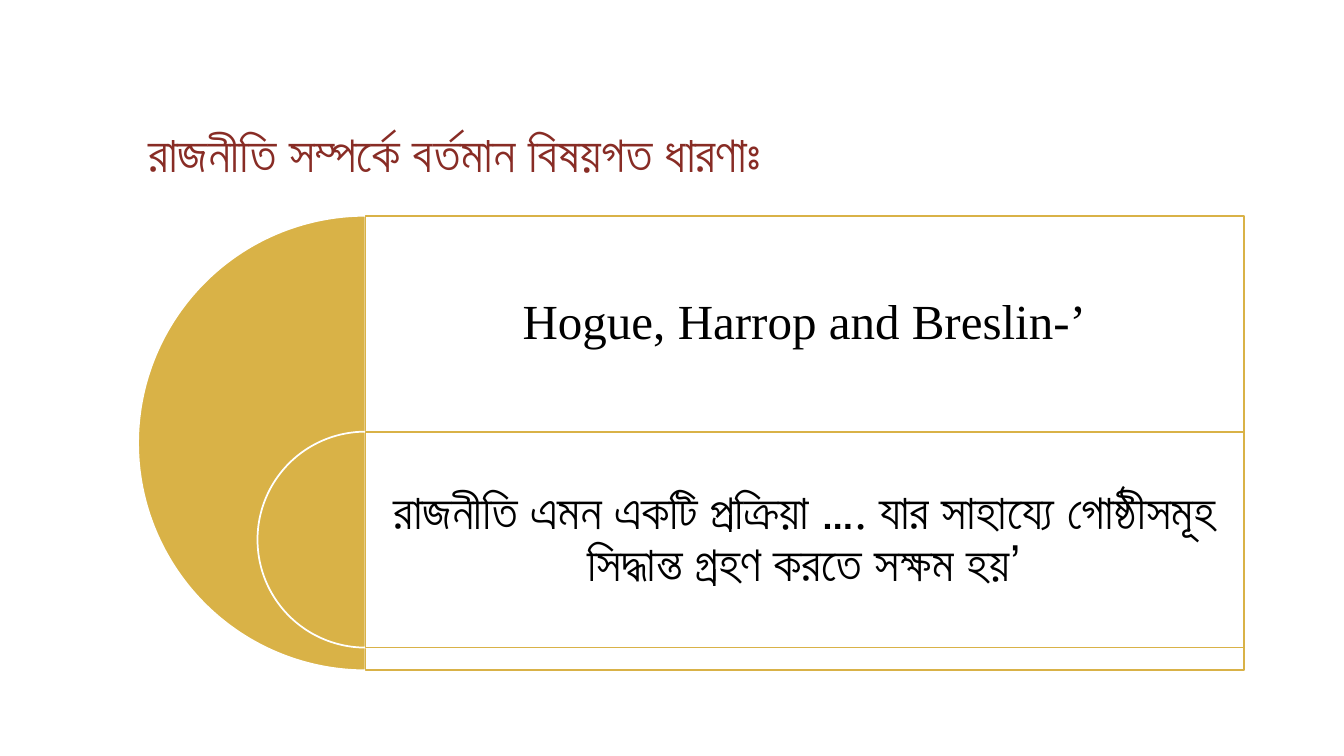
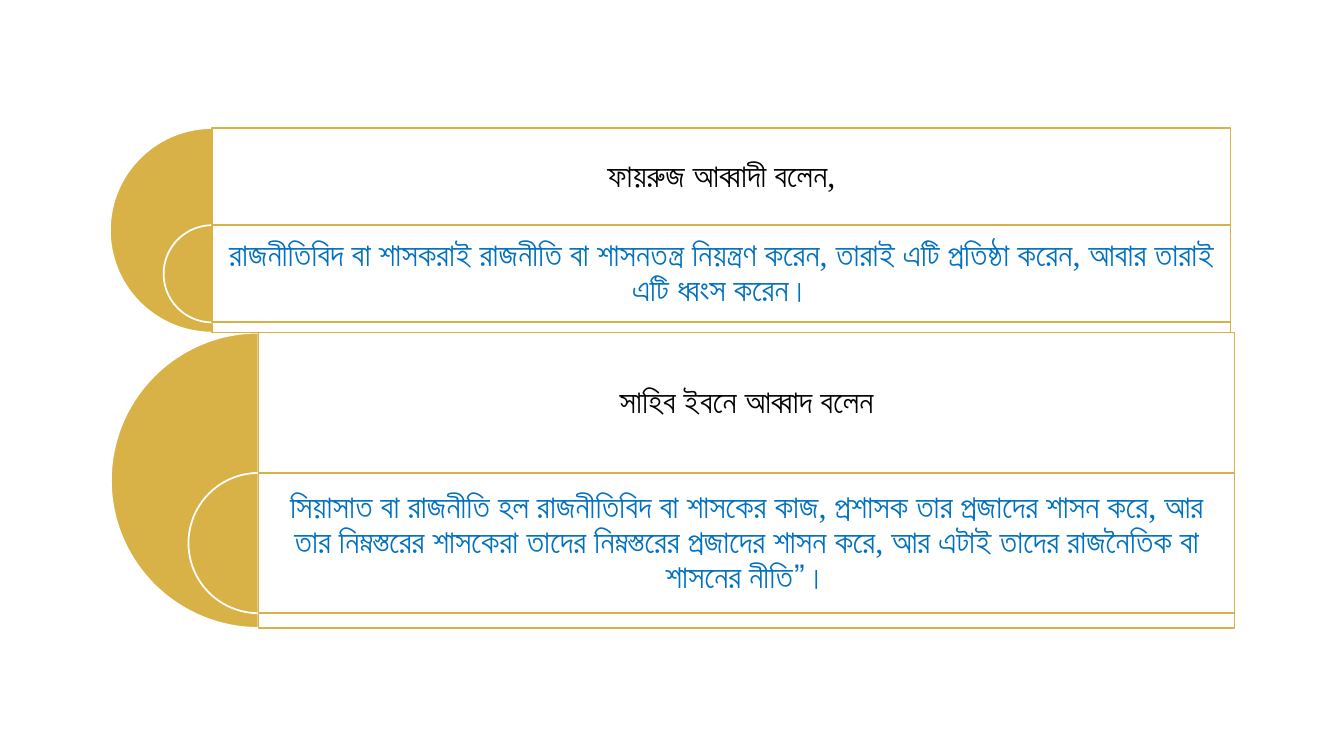
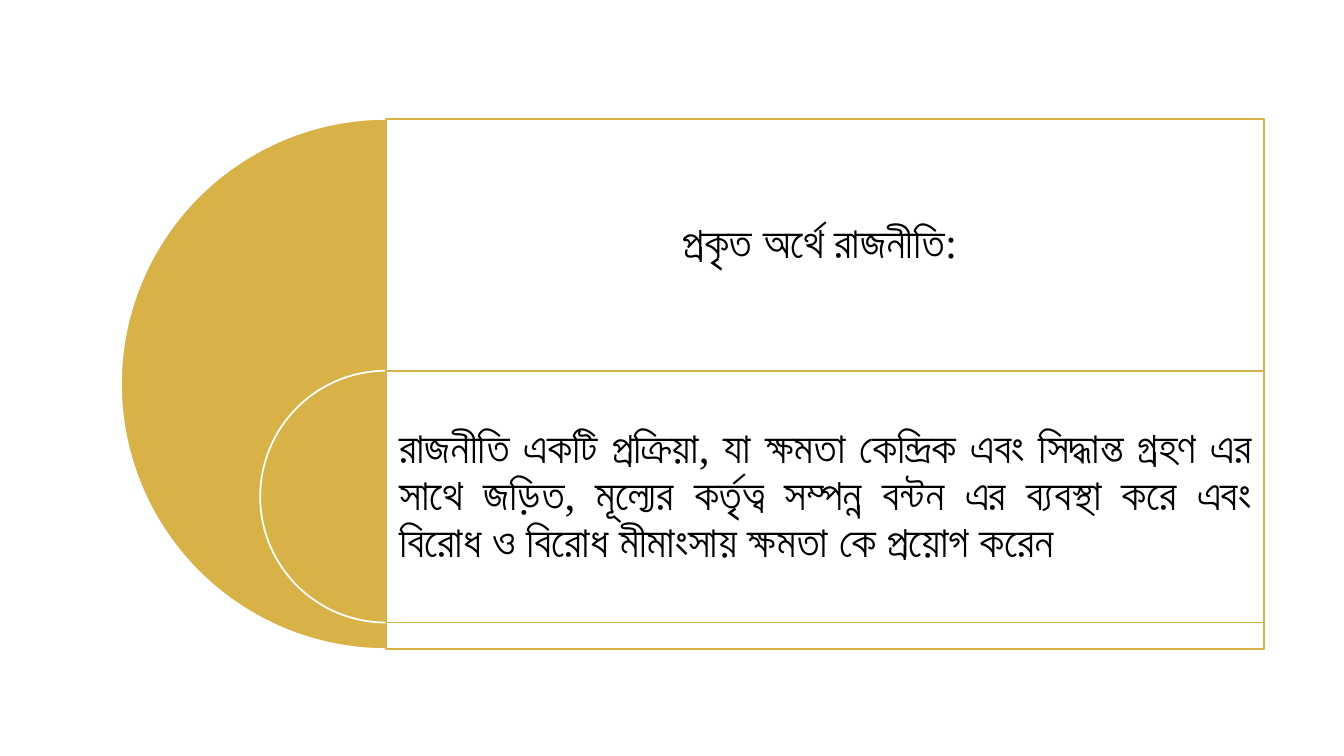
from lxml import etree
from pptx import Presentation
from pptx.dml.color import RGBColor
from pptx.enum.shapes import MSO_SHAPE as Shape
from pptx.enum.text import MSO_ANCHOR as Anchor, MSO_AUTO_SIZE as AutoSize, PP_ALIGN as Align
from pptx.oxml.ns import qn
from pptx.util import Inches, Pt

COLORS = {"gold": "D9B247", "white": "FFFFFF", "title": "882C25", "black": "000000", "blue": "0070C0"}
FONT = "Times New Roman"
TITLE_ONLY, BLANK = 5, 6
ROW_SHARE = 0.475  # height of a row as a share of the large half circle
PANEL_OPACITY = 90

# Each diagram: left, top, diameter, panel width, text size, inset,
# then its rows as (text, colour, alignment)
SLIDES = [
    {
        "title": "রাজনীতি সম্পর্কে বর্তমান বিষয়গত ধারণাঃ",
        "diagrams": [
            (1.37, 2.14, 4.51, 8.71, 35, 0.15, [
                ("Hogue, Harrop and Breslin-’", "black", Align.CENTER),
                ("রাজনীতি এমন একটি প্রক্রিয়া …. যার সাহায্যে গোষ্ঠীসমূহ সিদ্ধান্ত গ্রহণ করতে সক্ষম হয়’",
                 "black", Align.CENTER),
            ]),
        ],
    },
    {
        "diagrams": [
            (1.1, 3.3, 2.93, 9.68, 23, 0.1, [
                ("সাহিব ইবনে আব্বাদ বলেন", "black", Align.CENTER),
                ("সিয়াসাত বা রাজনীতি হল রাজনীতিবিদ বা শাসকের কাজ, প্রশাসক তার প্রজাদের শাসন করে, "
                 "আর তার নিম্নস্তরের শাসকেরা তাদের নিম্নস্তরের প্রজাদের শাসন করে, "
                 "আর এটাই তাদের রাজনৈতিক বা শাসনের নীতি”।", "blue", Align.CENTER),
            ]),
            (1.09, 1.27, 2.03, 10.1, 23, 0.1, [
                ("ফায়রুজ আব্বাদী বলেন,", "black", Align.CENTER),
                ("রাজনীতিবিদ বা শাসকরাই রাজনীতি বা শাসনতন্ত্র নিয়ন্ত্রণ করেন, তারাই এটি প্রতিষ্ঠা করেন, "
                 "আবার তারাই এটি ধ্বংস করেন।", "blue", Align.CENTER),
            ]),
        ],
    },
    {
        "diagrams": [
            (1.2, 1.18, 5.26, 8.71, 31, 0.13, [
                ("প্রকৃত অর্থে রাজনীতি: ", "black", Align.CENTER),
                ("রাজনীতি একটি প্রক্রিয়া, যা ক্ষমতা কেন্দ্রিক এবং সিদ্ধান্ত গ্রহণ এর সাথে জড়িত, "
                 "মূল্যের কর্তৃত্ব সম্পন্ন বন্টন এর ব্যবস্থা করে এবং বিরোধ ও বিরোধ মীমাংসায় "
                 "ক্ষমতা কে প্রয়োগ করেন", "black", Align.JUSTIFY),
            ]),
        ],
    },
]


def color(name):
    return RGBColor.from_string(COLORS[name])


def write(frame, text, size, color_name, align):
    frame.word_wrap = True
    para = frame.paragraphs[0]
    para.text = text
    para.alignment = align
    for span in para.runs:
        span.font.size = Pt(size)
        span.font.name = FONT
        span.font.color.rgb = color(color_name)
    return para


def add_filled(shapes, kind, left, top, width, height, fill, line):
    shape = shapes.add_shape(kind, Inches(left), Inches(top), Inches(width), Inches(height))
    shape.shadow.inherit = False
    shape.fill.solid()
    shape.fill.fore_color.rgb = color(fill)
    shape.line.color.rgb = color(line)
    shape.line.width = Pt(1.25)
    return shape


def add_half_circle(shapes, center, top, diameter):
    pie = add_filled(shapes, Shape.PIE, center - diameter / 2, top, diameter, diameter, "gold", "white")
    pie.adjustments[0], pie.adjustments[1] = 54, 162  # 90 to 270 degrees


def add_panel(shapes, left, top, width, height):
    panel = add_filled(shapes, Shape.RECTANGLE, left, top, width, height, "white", "gold")
    fill_color = panel._element.spPr.find(qn("a:solidFill"))[0]
    etree.SubElement(fill_color, qn("a:alpha"), val=str(PANEL_OPACITY * 1000))


def add_row_text(shapes, left, top, width, height, inset, *content):
    box = shapes.add_textbox(Inches(left), Inches(top), Inches(width), Inches(height))
    frame = box.text_frame
    frame.vertical_anchor = Anchor.MIDDLE
    frame.margin_left = frame.margin_right = Inches(inset)
    frame.margin_top = frame.margin_bottom = Inches(inset)
    write(frame, *content).line_spacing = 0.9


def add_diagram(page, left, top, diameter, width, size, inset, rows):
    """Nested half circles, each opening on a panel with one row of text."""
    shapes = page.shapes.add_group_shape().shapes
    center = left + diameter / 2
    row_height = diameter * ROW_SHARE
    for index, (text, color_name, align) in enumerate(rows):
        row_top = top + index * row_height
        level = row_height if index else diameter
        add_half_circle(shapes, center, row_top, level)
        add_panel(shapes, center, row_top, width, level)
        add_row_text(shapes, center, row_top, width, row_height, inset, text, size, color_name, align)


def add_title(page, text):
    title = page.shapes.title
    title.left, title.top, title.width, title.height = map(Inches, (1.37, 1.16, 8.81, 0.71))
    frame = title.text_frame
    frame.vertical_anchor = Anchor.TOP
    frame.auto_size = AutoSize.SHAPE_TO_FIT_TEXT
    write(frame, text, 36, "title", Align.LEFT)


def main():
    deck = Presentation()
    deck.slide_width, deck.slide_height = Inches(13.33), Inches(7.5)
    for content in SLIDES:
        title = content.get("title")
        page = deck.slides.add_slide(deck.slide_layouts[TITLE_ONLY if title else BLANK])
        if title:
            add_title(page, title)
        for diagram in content["diagrams"]:
            add_diagram(page, *diagram)
    deck.save("out.pptx")


if __name__ == "__main__":
    main()
